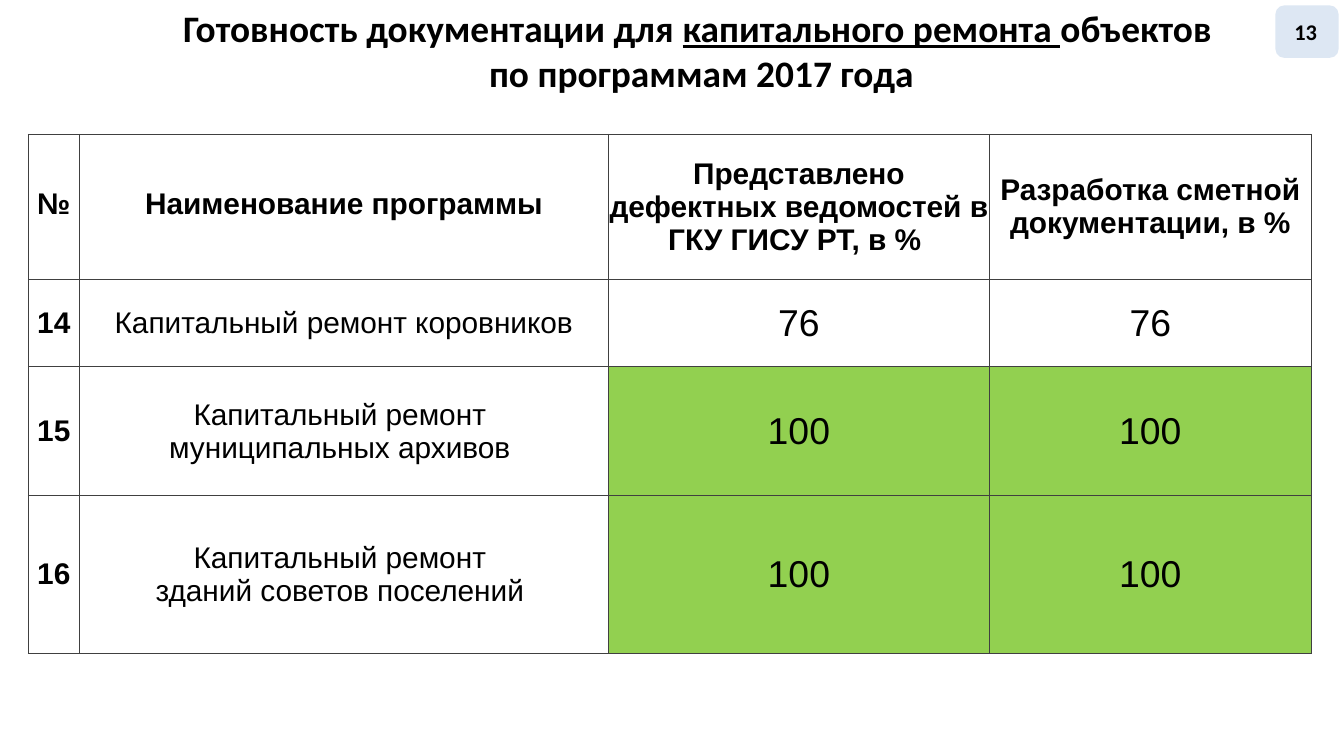
from lxml import etree
from pptx import Presentation
from pptx.dml.color import RGBColor
from pptx.enum.shapes import MSO_SHAPE
from pptx.enum.text import MSO_ANCHOR, MSO_AUTO_SIZE, PP_ALIGN
from pptx.oxml.ns import qn
from pptx.util import Inches, Pt

BLACK = RGBColor(0x00, 0x00, 0x00)
GREEN = RGBColor(0x92, 0xD0, 0x50)
PALE_BLUE = RGBColor(0xDD, 0xE7, 0xF3)
BORDER = RGBColor(0x40, 0x40, 0x40)


def add_run(p, text, size, font, bold=True):
    p.alignment = PP_ALIGN.CENTER
    r = p.add_run()
    r.text = text
    r.font.size = Pt(size)
    r.font.name = font
    r.font.bold = bold
    r.font.color.rgb = BLACK
    return r


def set_borders(cell):
    """Draw a thin line on all four sides; call before setting the fill."""
    tc_pr = cell._tc.get_or_add_tcPr()
    for side in ("a:lnL", "a:lnR", "a:lnT", "a:lnB"):
        ln = etree.SubElement(tc_pr, qn(side), w=str(Pt(0.5)))
        solid = etree.SubElement(ln, qn("a:solidFill"))
        etree.SubElement(solid, qn("a:srgbClr"), val=str(BORDER))


prs = Presentation()
prs.slide_width = Inches(10)
prs.slide_height = Inches(10 * 9 / 16)
s = prs.slides.add_slide(prs.slide_layouts[6])

# Readiness table
col_widths = [0.38, 3.94, 2.83, 2.4]
row_heights = [1.08, 0.65, 0.96, 1.17]
rows = [
    ["№", "Наименование программы",
     "Представлено дефектных ведомостей в ГКУ ГИСУ РТ, в % ",
     "Разработка сметной документации, в %"],
    ["14", "Капитальный ремонт коровников", "76", "76"],
    ["15", "Капитальный ремонт \nмуниципальных архивов ", "100", "100"],
    ["16", "Капитальный ремонт \nзданий советов поселений ", "100", "100"],
]
table = s.shapes.add_table(
    len(rows), len(col_widths), Inches(0.21), Inches(1),
    Inches(sum(col_widths)), Inches(sum(row_heights))).table
for column, width in zip(table.columns, col_widths):
    column.width = Inches(width)
for row, height in zip(table.rows, row_heights):
    row.height = Inches(height)

for i, texts in enumerate(rows):
    for j, text in enumerate(texts):
        cell = table.cell(i, j)
        is_header = i == 0
        is_value = i > 0 and j > 1
        set_borders(cell)
        if is_value and text == "100":
            cell.fill.solid()
            cell.fill.fore_color.rgb = GREEN
        else:
            cell.fill.background()
        cell.vertical_anchor = MSO_ANCHOR.MIDDLE
        cell.margin_top = cell.margin_bottom = 0
        cell.margin_left = cell.margin_right = Inches(0 if is_header and j > 1 else 0.01)
        tf = cell.text_frame
        for k, line in enumerate(text.split("\n")):
            p = tf.add_paragraph() if k else tf.paragraphs[0]
            if is_header and j < 2:
                p.line_spacing = Pt(15)
            add_run(p, line, 20 if is_value else 16, "Arial", is_header or j == 0)

# Title
title = s.shapes.add_textbox(Inches(1.11), Inches(-0.01), Inches(8.22), Inches(0.77))
tf = title.text_frame
tf.word_wrap = True
tf.auto_size = MSO_AUTO_SIZE.SHAPE_TO_FIT_TEXT
p = tf.paragraphs[0]
add_run(p, "Готовность документации для ", 20, "Calibri")
add_run(p, "капитального ремонта ", 20, "Calibri").font.underline = True
add_run(p, "объектов ", 20, "Calibri")
add_run(tf.add_paragraph(), "по программам 2017 года", 20, "Calibri")

# Page number badge
badge = s.shapes.add_shape(
    MSO_SHAPE.ROUNDED_RECTANGLE, Inches(9.49), Inches(0.04), Inches(0.47), Inches(0.39))
badge.shadow.inherit = False
badge.fill.solid()
badge.fill.fore_color.rgb = PALE_BLUE
badge.line.fill.background()
tf = badge.text_frame
tf.vertical_anchor = MSO_ANCHOR.MIDDLE
tf.margin_left = Inches(0.08)
tf.margin_right = Inches(0.1)
tf.margin_top = tf.margin_bottom = Inches(0.05)
add_run(tf.paragraphs[0], "13", 12, "Calibri")

prs.save("out.pptx")
